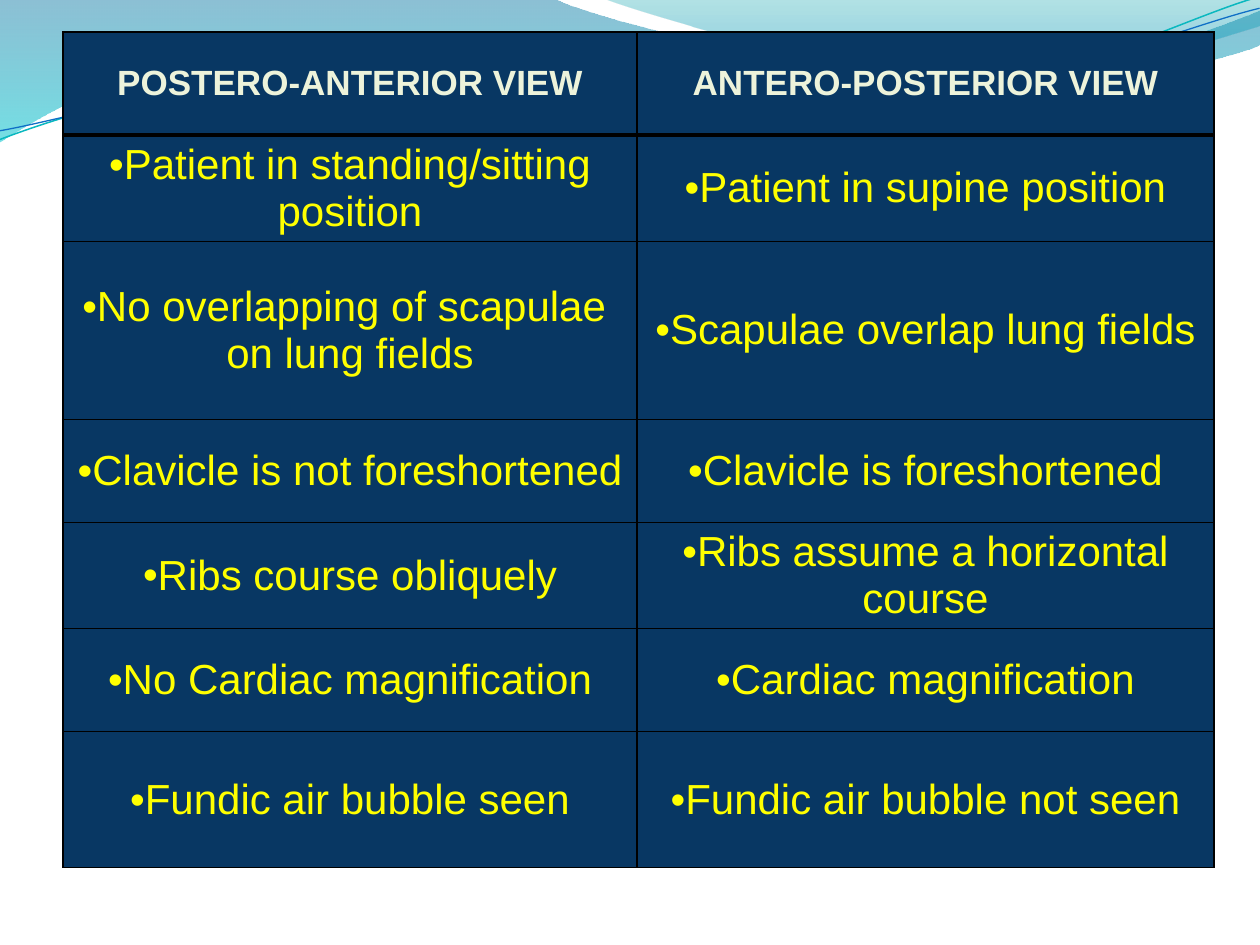
from lxml import etree
from pptx import Presentation
from pptx.dml.color import RGBColor
from pptx.enum.text import MSO_ANCHOR, PP_ALIGN
from pptx.oxml.ns import qn
from pptx.util import Pt

MIDDLE = MSO_ANCHOR.MIDDLE
CENTER = PP_ALIGN.CENTER

PX_PER_INCH = 126
FONT = "Arial"
STRAND_TILT = 357.3

NAVY = RGBColor(0x08, 0x37, 0x63)
CREAM = RGBColor(0xED, 0xF3, 0xDB)
YELLOW = RGBColor(0xFF, 0xFF, 0x00)
BLACK = RGBColor(0x00, 0x00, 0x00)
DEEP_BLUE = RGBColor(0x00, 0x74, 0xA1)
CYAN = RGBColor(0x00, 0xC6, 0xCF)
SEA_GREEN = RGBColor(0x00, 0xA1, 0xA9)
SKY_BLUE = RGBColor(0x00, 0x8B, 0xBF)
TEAL = RGBColor(0x0A, 0xB8, 0xBF)
BLUE = RGBColor(0x0F, 0x6F, 0xC6)

# Each outline is a start point, then pairs for lines and
# three pairs (two control points and an end) for curves.
LARGE_WAVE = [
    (0, 0), (554, -1),
    (600, 21, 837, 79, 955, 79), (1074, 79, 1207, 33, 1260, 11),
    (1261, 45),
    (1239, 55, 1096, 96, 940, 94), (784, 94, 481, 35, 324, 43),
    (163, 45, 58, 105, -1, 142), (0, 0),
]
SMALL_WAVE = [
    (604, -1),
    (641, 14, 859, 78, 969, 82), (1079, 87, 1211, 40, 1260, 26),
    (1260, 0), (604, -1),
]
# The strands are given before they are tilted.
TEAL_STRAND = [
    (-3, 110),
    (58, 90, 199, 52, 350, 53), (499, 53, 745, 117, 896, 114),
    (1049, 109, 1184, 45, 1260, 27),
]
BLUE_STRAND = [
    (-2, 101),
    (57, 94, 207, 57, 357, 58), (509, 58, 750, 112, 902, 107),
    (1052, 104, 1188, 52, 1262, 38),
]

TABLE_HEIGHT = 850
COLUMN_WIDTHS = [574, 577]
ROW_HEIGHTS = [103, 103, 178, 103, 103, 103, 136]
VIEWS = [
    ("POSTERO-ANTERIOR VIEW", "ANTERO-POSTERIOR VIEW"),
    ("Patient in standing/sitting position", "Patient in supine position"),
    ("No overlapping of scapulae \non lung fields",
     "Scapulae overlap lung fields"),
    ("Clavicle is not foreshortened", "Clavicle is foreshortened"),
    ("Ribs course obliquely", "Ribs assume a horizontal course"),
    ("No Cardiac magnification", "Cardiac magnification"),
    ("Fundic air bubble seen", "Fundic air bubble not seen"),
]


def px(length):
    return round(length * 914400 / PX_PER_INCH)


def add_outline(slide, outline, close):
    """Add a freeform, joining the three points of each curve into a Bézier."""
    numbers = [px(number) for segment in outline for number in segment]
    points = list(zip(numbers[::2], numbers[1::2]))
    builder = slide.shapes.build_freeform(*points[0])
    builder.add_line_segments(points[1:], close=close)
    shape = builder.convert_to_shape()
    shape.shadow.inherit = False
    lines = shape._element.spPr.iter(qn("a:lnTo"))
    lines = iter(list(lines))
    for segment in outline[1:]:
        first = next(lines)
        if len(segment) == 6:
            first.tag = qn("a:cubicBezTo")
            for line in (next(lines), next(lines)):
                first.append(line[0])
                line.getparent().remove(line)
    return shape


def add_wave(slide, outline, stops):
    """Add a closed shape; stops are (position, colour, opacity percent)."""
    shape = add_outline(slide, outline, close=True)
    shape.line.fill.background()
    shape.fill.gradient()
    shape.fill.gradient_angle = 270
    for stop, (position, color, _) in zip(shape.fill.gradient_stops, stops):
        stop.position = position
        stop.color.rgb = color
    colors = shape._element.spPr.iter(qn("a:srgbClr"))
    for element, (_, _, opacity) in zip(colors, stops):
        etree.SubElement(element, qn("a:alpha"), val=str(opacity * 1000))


def add_strand(slide, outline, color, width):
    shape = add_outline(slide, outline, close=False)
    shape.rotation = STRAND_TILT
    shape.fill.background()
    shape.line.color.rgb = color
    shape.line.width = Pt(width)


def set_borders(cell, top, bottom):
    """Draw black borders; the sides are always one point wide."""
    properties = cell._tc.get_or_add_tcPr()
    widths = {"a:lnL": 1, "a:lnR": 1, "a:lnT": top, "a:lnB": bottom}
    for index, (tag, width) in enumerate(widths.items()):
        line = etree.Element(qn(tag), w=str(Pt(width)))
        fill = etree.SubElement(line, qn("a:solidFill"))
        etree.SubElement(fill, qn("a:srgbClr"), val=str(BLACK))
        properties.insert(index, line)


def add_bullet(para):
    properties = para._p.get_or_add_pPr()
    properties.set("marL", "0")
    properties.set("indent", "0")
    etree.SubElement(properties, qn("a:buFont"), typeface=FONT)
    etree.SubElement(properties, qn("a:buChar"), char="•")


def fill_cell(cell, text, is_header):
    cell.fill.solid()
    cell.fill.fore_color.rgb = NAVY
    cell.vertical_anchor = MIDDLE
    para = cell.text_frame.paragraphs[0]
    para.alignment = CENTER
    if not is_header:
        add_bullet(para)
    for index, line in enumerate(text.split("\n")):
        if index:
            para.add_line_break()
        span = para.add_run()
        span.text = line
        span.font.name = FONT
        span.font.size = Pt(20 if is_header else 24)
        span.font.bold = is_header
        span.font.color.rgb = CREAM if is_header else YELLOW


def add_comparison(slide, left, top):
    frame = slide.shapes.add_table(
        len(VIEWS), len(COLUMN_WIDTHS), px(left), px(top),
        px(sum(COLUMN_WIDTHS)), px(TABLE_HEIGHT))
    table = frame.table
    table.first_row = False
    table.horz_banding = False
    for column, width in zip(table.columns, COLUMN_WIDTHS):
        column.width = px(width)
    for index, (row, height, texts) in enumerate(
            zip(table.rows, ROW_HEIGHTS, VIEWS)):
        row.height = px(height)
        for cell, text in zip(row.cells, texts):
            fill_cell(cell, text, is_header=index == 0)
            set_borders(cell, top=3 if index == 1 else 1,
                        bottom=3 if index == 0 else 1)
    frame.height = px(TABLE_HEIGHT)


def main():
    deck = Presentation()
    deck.slide_width, deck.slide_height = px(1260), px(945)
    page = deck.slides.add_slide(deck.slide_layouts[6])
    add_wave(page, LARGE_WAVE, [(0, DEEP_BLUE, 45), (1, CYAN, 55)])
    add_wave(page, SMALL_WAVE, [(0, SEA_GREEN, 30), (0.8, SKY_BLUE, 45)])
    add_strand(page, TEAL_STRAND, TEAL, 0.85)
    add_strand(page, BLUE_STRAND, BLUE, 0.75)
    add_comparison(page, 63, 32)
    deck.save("out.pptx")


if __name__ == "__main__":
    main()
